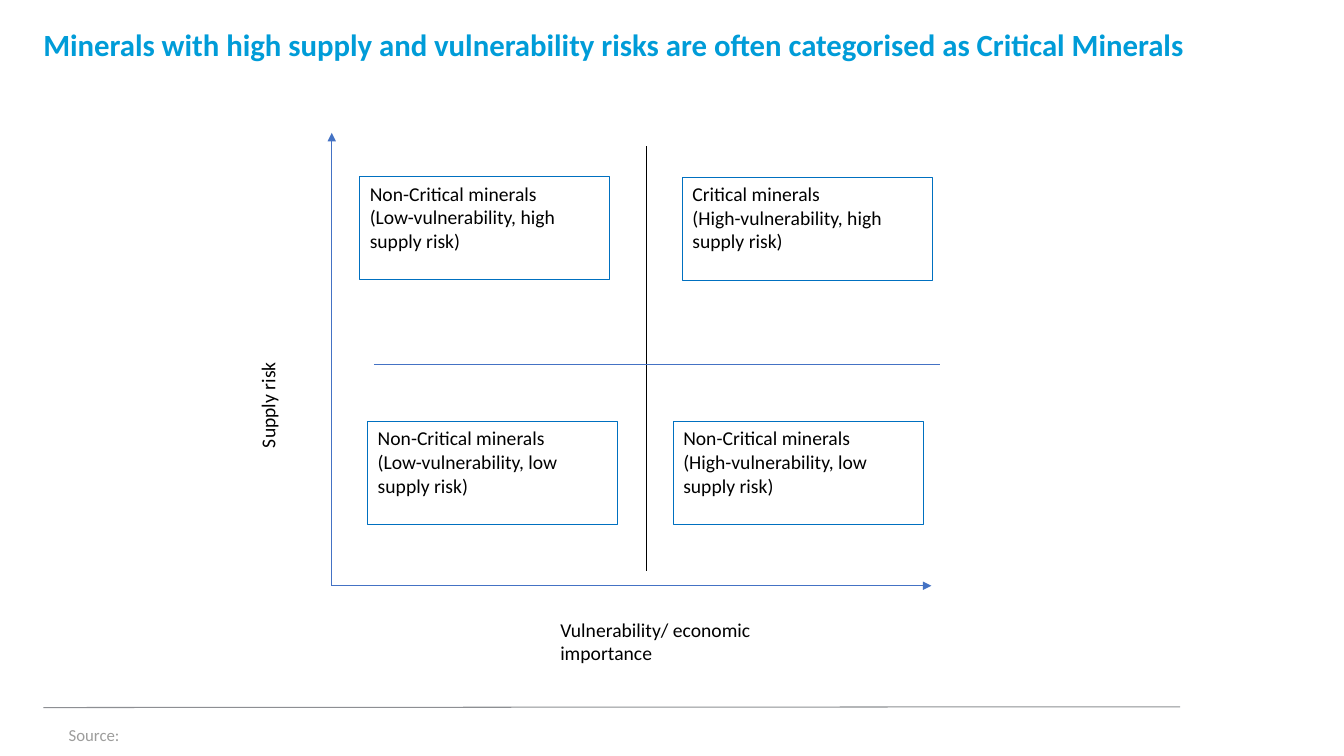
from dataclasses import dataclass

from lxml.etree import SubElement
from pptx import Presentation
from pptx.dml.color import RGBColor
from pptx.enum.shapes import MSO_CONNECTOR, MSO_SHAPE
from pptx.enum.text import MSO_ANCHOR, MSO_AUTO_SIZE, PP_ALIGN
from pptx.oxml.ns import qn
from pptx.util import Cm, Pt


@dataclass(frozen=True)
class Theme:
    """Fonts, colours and sizes of the slide."""
    font: str = "Calibri"
    heading: str = "009CD8"
    ink: str = "000000"
    axis: str = "4472C4"
    border: str = "0070C0"
    rule: str = "8D8F93"
    muted: str = "9D9D9C"
    heading_size: float = 22
    body_size: float = 14
    source_size: float = 12
    thin: float = 0.5
    regular: float = 0.75


THEME = Theme()
QUADRANT_WIDTH, QUADRANT_HEIGHT = 6.3, 2.59
QUADRANTS = [
    (17.2, 4.47, "Critical", "High", "high"),
    (9.07, 4.45, "Non-Critical", "Low", "high"),
    (9.27, 10.62, "Non-Critical", "Low", "low"),
    (16.97, 10.62, "Non-Critical", "High", "low"),
]


def write(frame, lines, size=THEME.body_size, color=THEME.ink, bold=False):
    """Fill a text frame with left-aligned, wrapped paragraphs."""
    frame.text = "\n".join(lines)
    frame.word_wrap = True
    frame.auto_size = MSO_AUTO_SIZE.NONE
    frame.vertical_anchor = MSO_ANCHOR.TOP
    for paragraph in frame.paragraphs:
        paragraph.alignment = PP_ALIGN.LEFT
        paragraph.font.name = THEME.font
        paragraph.font.size = Pt(size)
        paragraph.font.bold = bold
        paragraph.font.color.rgb = RGBColor.from_string(color)


def add_title(slide, wording):
    """Place and format the title placeholder."""
    title = slide.shapes.title
    title.left, title.top, title.width, title.height = Cm(1.09), Cm(0.53), Cm(31.34), Cm(2.21)
    write(title.text_frame, [wording], THEME.heading_size, THEME.heading, bold=True)
    title.text_frame.margin_left = title.text_frame.margin_right = 0


def add_line(slide, start, end, color, weight=THEME.thin, arrow=False):
    """Draw a straight line, with an optional arrowhead at its end."""
    line = slide.shapes.add_connector(MSO_CONNECTOR.STRAIGHT, *map(Cm, start + end))
    line.line.color.rgb = RGBColor.from_string(color)
    line.line.width = Pt(weight)
    if arrow:
        SubElement(line.line._get_or_add_ln(), qn("a:tailEnd"), type="triangle")
    SubElement(line._element.spPr, qn("a:effectLst"))


def add_quadrant(slide, left, top, category, vulnerability, risk):
    """Draw the outlined box that describes one quadrant."""
    quadrant = slide.shapes.add_shape(
        MSO_SHAPE.RECTANGLE, Cm(left), Cm(top), Cm(QUADRANT_WIDTH), Cm(QUADRANT_HEIGHT))
    quadrant.shadow.inherit = False
    quadrant.fill.background()
    quadrant.line.color.rgb = RGBColor.from_string(THEME.border)
    quadrant.line.width = Pt(THEME.regular)
    write(quadrant.text_frame,
          [f"{category} minerals", f"({vulnerability}-vulnerability, {risk} supply risk)"])


def add_label(slide, wording, left, top, width, height, **style):
    """Add a text box and return its text frame."""
    label = slide.shapes.add_textbox(Cm(left), Cm(top), Cm(width), Cm(height))
    write(label.text_frame, [wording], **style)
    return label.text_frame


def add_source(slide):
    """Add the indented source line at the foot of the slide."""
    source = add_label(slide, "Source:", 1.09, 17.98, 27.05, 1.07,
                       size=THEME.source_size, color=THEME.muted)
    source.margin_left = Cm(0.64)
    source.vertical_anchor = MSO_ANCHOR.MIDDLE


def main():
    """Build the mineral risk matrix and save it."""
    deck = Presentation()
    deck.slide_width, deck.slide_height = Cm(33.87), Cm(19.05)
    slide = deck.slides.add_slide(deck.slide_layouts[5])

    add_line(slide, (1.09, 17.83), (29.74, 17.81), THEME.rule, THEME.regular)
    add_title(slide, "Minerals with high supply and vulnerability risks "
                     "are often categorised as Critical Minerals")
    add_source(slide)

    origin = (8.36, 14.76)
    add_line(slide, origin, (23.47, 14.76), THEME.axis, arrow=True)
    add_line(slide, origin, (8.36, 3.35), THEME.axis, arrow=True)
    add_line(slide, (16.28, 3.68), (16.28, 14.4), THEME.ink)
    add_line(slide, (9.42, 9.19), (23.7, 9.19), THEME.axis)
    for quadrant in QUADRANTS:
        add_quadrant(slide, *quadrant)

    add_label(slide, "Vulnerability/ economic importance", 13.87, 15.44, 5.49, 1.02)
    supply_risk = add_label(slide, "Supply risk", 6.32, 7.04, 1.57, 4.5)
    supply_risk._txBody.bodyPr.set("vert", "vert270")

    deck.save("out.pptx")


if __name__ == "__main__":
    main()
